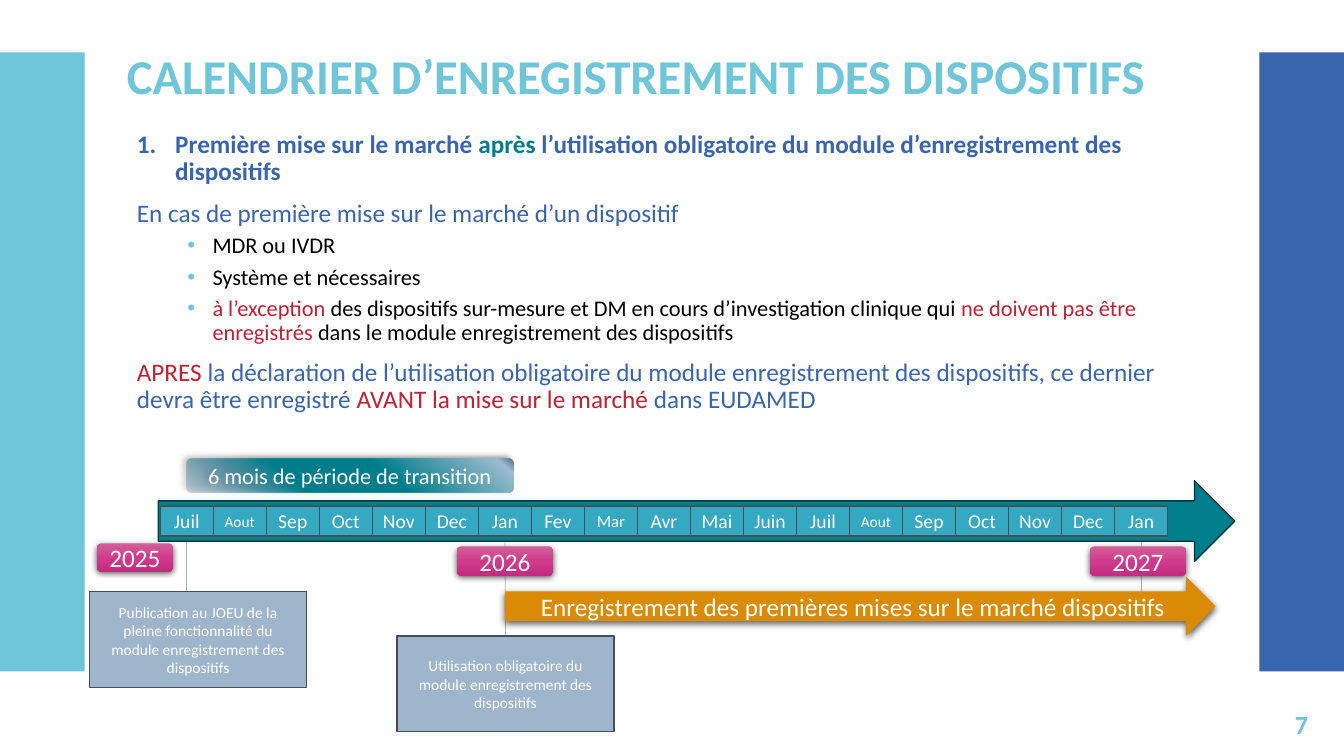
from dataclasses import dataclass

from lxml.etree import SubElement
from pptx import Presentation
from pptx.dml.color import RGBColor
from pptx.enum.shapes import MSO_CONNECTOR as Connector, MSO_SHAPE as Shape
from pptx.enum.text import MSO_ANCHOR as Anchor, PP_ALIGN as Align
from pptx.oxml.ns import qn
from pptx.util import Inches, Pt


@dataclass(frozen=True)
class Theme:
    font: str = "Calibri"
    blue: str = "3965AE"
    sky: str = "6EC6D8"
    teal: str = "007E8B"
    teal_dark: str = "00373D"
    month: str = "34A9C1"
    outline: str = "454F59"
    note: str = "9EB5CB"
    orange: str = "DB8A06"
    red: str = "C32033"
    black: str = "000000"
    white: str = "FFFFFF"
    # Gradients: angle, then (position, colour, opacity) stops, in percent
    pink: tuple = (90, [(0, "D16099", 100), (50, "D13B8D", 100), (100, "C12D7E", 100)])
    transition: tuple = (130, [(0, "486886", 100), (5, "9DBDD1", 100), (39, "007E8B", 100),
                               (67, "007E8B", 100), (100, "5C83A8", 30)])
    # Shadows: opacity, blur, distance, angle
    soft: tuple = (63, 4.5, 1.5, 90)
    upward: tuple = (40, 4, 3, 225)
    title_size: float = 34.7
    page_size: float = 18.7
    lead_size: int = 18
    text_size: int = 16
    month_size: int = 14
    note_size: int = 11


theme = Theme()
COLUMNS, ROWS = 133.33, 75  # grid cells of a tenth of an inch
CELL = Inches(0.1)


def add_box(kind, at, fill, text="", size=theme.lead_size, line=None, shadow=None):
    """Add a filled shape, placed in grid cells, with centred white text."""
    shape = slide.shapes.add_shape(kind, *[round(value * CELL) for value in at])
    shape.shadow.inherit = False
    properties = shape._element.spPr
    if isinstance(fill, str):
        shape.fill.solid()
        shape.fill.fore_color.rgb = RGBColor.from_string(fill)
    else:
        angle, stops = fill
        shape.fill.gradient()
        shape.fill.gradient_angle = 360 - angle
        stop_list = properties.find(qn("a:gradFill")).find(qn("a:gsLst"))
        stop_list.clear()
        for position, colour, opacity in stops:
            stop = SubElement(stop_list, qn("a:gs"), pos=str(position * 1000))
            rgb = SubElement(stop, qn("a:srgbClr"), val=colour)
            SubElement(rgb, qn("a:alpha"), val=str(opacity * 1000))
    if line:
        shape.line.color.rgb = RGBColor.from_string(line)
        shape.line.width = Pt(1)
    else:
        shape.line.fill.background()
    if shadow:
        opacity, blur, distance, angle = shadow
        outer = SubElement(properties.find(qn("a:effectLst")), qn("a:outerShdw"),
                           blurRad=str(Pt(blur)), dist=str(Pt(distance)),
                           dir=str(angle * 60000), algn="ctr", rotWithShape="0")
        rgb = SubElement(outer, qn("a:srgbClr"), val=theme.black)
        SubElement(rgb, qn("a:alpha"), val=str(opacity * 1000))
    if text:
        shape.text_frame.vertical_anchor = Anchor.MIDDLE
        write(shape.text_frame.paragraphs[0], [(text, theme.white)], size, align=Align.CENTER)
    return shape


def write(paragraph, runs, size, bold=False, align=Align.LEFT):
    """Fill a paragraph with (text, colour) runs that share one font."""
    paragraph.alignment = align
    paragraph.font.name = theme.font
    paragraph.font.size = Pt(size)
    paragraph.font.bold = bold
    for text, colour in runs:
        run = paragraph.add_run()
        run.text = text
        run.font.color.rgb = RGBColor.from_string(colour)


presentation = Presentation()
presentation.slide_width = round(COLUMNS * CELL)
presentation.slide_height = ROWS * CELL
slide = presentation.slides.add_slide(presentation.slide_layouts[6])

# Side bands
BAND = 8.4
for left, colour in [(COLUMNS - BAND, theme.blue), (0, theme.sky)]:
    add_box(Shape.RECTANGLE, (left, 5.2, BAND, 61.4), colour)

# Title, body and page number frames
title, body, page = [
    slide.shapes.add_textbox(*[round(value * CELL) for value in at]).text_frame
    for at in [(12.6, 5.2, 108.1, 5.2), (12.6, 12.6, 108.1, 30),
               (COLUMNS - BAND, 70.3, BAND, 3.1)]]
for frame in (title, body, page):
    frame.word_wrap = True
title.margin_left = title.margin_right = title.margin_top = title.margin_bottom = 0
title.paragraphs[0].line_spacing = 0.9
write(title.paragraphs[0], [("CALENDRIER D’ENREGISTREMENT DES DISPOSITIFS", theme.sky)],
      theme.title_size, bold=True)
page.vertical_anchor = Anchor.MIDDLE
write(page.paragraphs[0], [("7", theme.sky)], theme.page_size, bold=True, align=Align.CENTER)

# Body text: style, then runs
body_text = [
    ("number", [("Première mise sur le marché ", theme.blue), ("après", theme.teal),
                (" l’utilisation obligatoire du module d’enregistrement des dispositifs",
                 theme.blue)]),
    ("lead", [("En cas de première mise sur le marché d’un dispositif", theme.blue)]),
    ("bullet", [("MDR ou IVDR", theme.black)]),
    ("bullet", [("Système et nécessaires", theme.black)]),
    ("bullet", [("à l’exception ", theme.red),
                ("des dispositifs sur-mesure et DM en cours d’investigation clinique qui ",
                 theme.black),
                ("ne doivent pas être enregistrés ", theme.red),
                ("dans le module enregistrement des dispositifs", theme.black)]),
    ("lead", [("APRES", theme.red),
              (" la déclaration de l’utilisation obligatoire du module enregistrement des "
               "dispositifs, ce dernier devra être enregistré ", theme.blue),
              ("AVANT la mise sur le marché ", theme.red), ("dans EUDAMED", theme.blue)]),
]
for index, (style, runs) in enumerate(body_text):
    paragraph = body.add_paragraph() if index else body.paragraphs[0]
    bullet = style == "bullet"
    paragraph.line_spacing = 0.9
    paragraph.space_before = Pt(0 if index == 0 else 5 if bullet else 10)
    properties = paragraph._p.get_or_add_pPr()
    if bullet:
        paragraph.level = 1
        properties.set("marL", str(Inches(0.75)))
        properties.set("indent", str(Inches(-0.25)))
        SubElement(SubElement(properties, qn("a:buClr")), qn("a:srgbClr"), val=theme.sky)
        SubElement(properties, qn("a:buFont"), typeface="Arial")
        SubElement(properties, qn("a:buChar"), char="•")
    elif style == "number":
        properties.set("marL", str(Inches(0.38)))
        properties.set("indent", str(Inches(-0.38)))
        SubElement(properties, qn("a:buFont"), typeface="+mj-lt")
        SubElement(properties, qn("a:buAutoNum"), type="arabicPeriod")
    write(paragraph, runs, theme.text_size if bullet else theme.lead_size,
          bold=style == "number")

# Date markers, behind the timeline: month index and bottom row
FIRST_MONTH, MONTH = 15.9, 5.26
markers = {}
for month, bottom in [(18, 59.9), (6, 63.1), (0, 59.6)]:
    x = round((FIRST_MONTH + (month + 0.5) * MONTH) * CELL)
    marker = slide.shapes.add_connector(Connector.STRAIGHT, x, round(53.2 * CELL),
                                        x, round(bottom * CELL))
    marker.line.color.rgb = RGBColor.from_string(theme.note)
    marker.line.width = Pt(0.5)
    SubElement(marker._element.spPr, qn("a:effectLst"))
    markers[month] = marker

# Timeline arrow and months
add_box(Shape.RIGHT_ARROW, (15.7, 47.7, 106.8, 8), theme.teal, line=theme.teal_dark)
months = "Juil Aout Sep Oct Nov Dec Jan Fev Mar Avr Mai Juin Juil Aout Sep Oct Nov Dec Jan"
month_sizes = {"Aout": 11, "Mar": 12}
for index, name in enumerate(months.split()):
    month = add_box(Shape.RECTANGLE, (FIRST_MONTH + index * MONTH, 50.2, MONTH, 3), theme.month,
                    name, month_sizes.get(name, theme.month_size), line=theme.outline)
    month.text_frame.margin_left = month.text_frame.margin_right = 0
    if index in markers:
        markers[index].begin_connect(month, 2)

# Transition period, years and registration arrow
add_box(Shape.ROUNDED_RECTANGLE, (18.5, 45.5, 32.4, 3.4), theme.transition,
        "6 mois de période de transition", theme.text_size, shadow=theme.upward)
for year, at in [("2025", (9.6, 53.9, 7.6, 2.8)), ("2026", (45.3, 54.2, 9.6, 2.9)),
                 ("2027", (108.1, 54.2, 9.6, 2.9))]:
    add_box(Shape.ROUNDED_RECTANGLE, at, theme.pink, year, shadow=theme.soft)
add_box(Shape.RIGHT_ARROW, (50.1, 57.2, 70.5, 5.9), theme.orange,
        "Enregistrement des premières mises sur le marché dispositifs", shadow=theme.soft)

# Milestone notes
NOTE_SIZE = (21.5, 9.5)
add_box(Shape.RECTANGLE, (8.9, 58.7, *NOTE_SIZE), theme.note,
        "Publication au JOEU de la pleine fonctionnalité du module enregistrement des dispositifs",
        theme.note_size, line=theme.outline)
mandatory_use = add_box(Shape.RECTANGLE, (39.4, 63.1, *NOTE_SIZE), theme.note,
                        "Utilisation obligatoire du module enregistrement des dispositifs",
                        theme.note_size, line=theme.outline)
markers[6].end_connect(mandatory_use, 0)

presentation.save("out.pptx")
